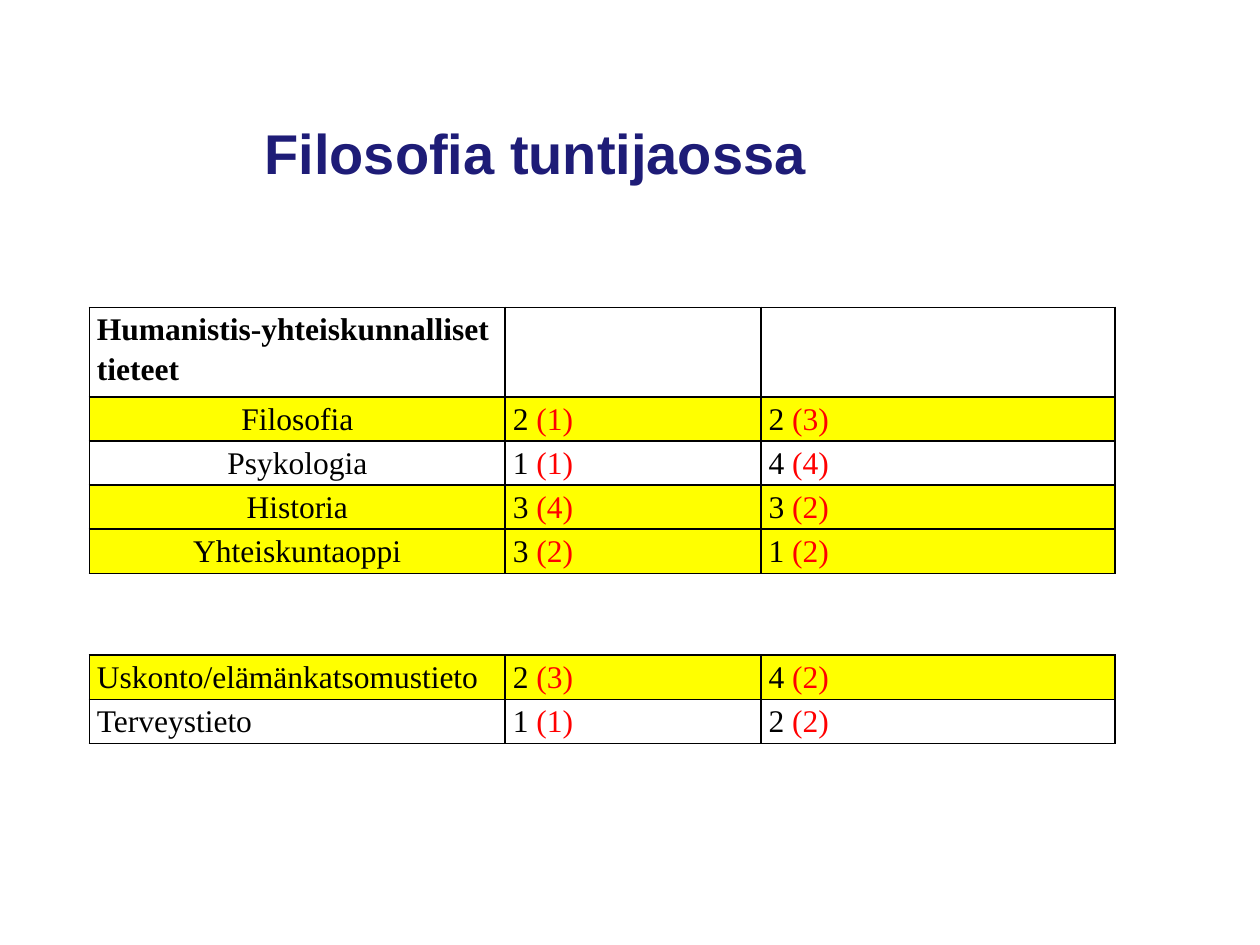
from lxml.etree import SubElement
from pptx import Presentation
from pptx.dml.color import RGBColor
from pptx.enum.text import MSO_ANCHOR, PP_ALIGN
from pptx.oxml.ns import qn
from pptx.util import Inches, Pt

BLACK, RED, YELLOW, WHITE, NAVY = "000000", "FF0000", "FFFF00", "FFFFFF", "1E1C77"


def color(hex_string):
    return RGBColor.from_string(hex_string)


def add_text(paragraph, text, *, font="Times New Roman", size=18, fill=BLACK, bold=False):
    run = paragraph.add_run()
    run.text = text
    run.font.name = font
    run.font.size = Pt(size)
    run.font.bold = bold
    run.font.color.rgb = color(fill)


class SlideBuilder:
    left = 0.71
    column_widths = (3.3, 2.03, 2.81)
    row_height = 0.35
    cell_margin = 0.06

    def __init__(self, presentation):
        self.slide = presentation.slides.add_slide(presentation.slide_layouts[5])

    def title(self, text):
        shape = self.slide.shapes.title
        shape.left, shape.top = Inches(2), Inches(0.17)
        shape.width, shape.height = Inches(7.67), Inches(1.22)
        frame = shape.text_frame
        frame.word_wrap = True
        frame.vertical_anchor = MSO_ANCHOR.TOP
        frame.margin_top, frame.margin_bottom = Inches(0.89), 0
        paragraph = frame.paragraphs[0]
        paragraph.alignment = PP_ALIGN.LEFT
        paragraph.line_spacing = Pt(30)
        add_text(paragraph, text, font="Arial", size=32, fill=NAVY, bold=True)

    def borders(self, cell):
        properties = cell._tc.get_or_add_tcPr()
        for position, side in enumerate(("lnL", "lnR", "lnT", "lnB")):
            line = properties.makeelement(qn(f"a:{side}"), {"w": str(Pt(1))})
            properties.insert(position, line)
            fill = SubElement(line, qn("a:solidFill"))
            SubElement(fill, qn("a:srgbClr"), val=BLACK)

    def cell(self, cell, parts, fill, bold=False, alignment=PP_ALIGN.LEFT):
        cell.margin_left = cell.margin_right = Inches(self.cell_margin)
        cell.margin_top = cell.margin_bottom = 0
        cell.fill.solid()
        cell.fill.fore_color.rgb = color(fill)
        self.borders(cell)
        paragraph = cell.text_frame.paragraphs[0]
        paragraph.alignment = alignment
        paragraph.line_spacing = 1.15
        paragraph.space_after = Pt(10)
        for text, text_color in parts:
            add_text(paragraph, text, fill=text_color, bold=bold)

    def table(self, top, subjects, heading=None, alignment=PP_ALIGN.LEFT):
        heights = [0.71] * bool(heading) + [self.row_height] * len(subjects)
        table = self.slide.shapes.add_table(
            len(heights), len(self.column_widths), Inches(self.left), Inches(top),
            Inches(sum(self.column_widths)), Inches(sum(heights))).table
        table.first_row = table.horz_banding = False
        for column, width in zip(table.columns, self.column_widths):
            column.width = Inches(width)
        for row, height in zip(table.rows, heights):
            row.height = Inches(height)

        rows = list(table.rows)
        if heading:
            for cell, text in zip(rows.pop(0).cells, (heading, "", "")):
                self.cell(cell, [(text, BLACK)] if text else [], WHITE, bold=True)
        # Each count is a pair: the current value, then the other in red
        for row, (name, fill, *counts) in zip(rows, subjects):
            name_cell, *count_cells = row.cells
            self.cell(name_cell, [(name, BLACK)], fill, alignment=alignment)
            for cell, (count, bracketed) in zip(count_cells, counts):
                self.cell(cell, [(f"{count} ", BLACK), (f"({bracketed})", RED)], fill)


def main():
    presentation = Presentation()
    presentation.slide_width, presentation.slide_height = Inches(10), Inches(7.5)
    builder = SlideBuilder(presentation)

    # Title
    builder.title("Filosofia tuntijaossa")

    # Humanities and social sciences
    builder.table(2.44, [
        ("Filosofia", YELLOW, (2, 1), (2, 3)),
        ("Psykologia", WHITE, (1, 1), (4, 4)),
        ("Historia", YELLOW, (3, 4), (3, 2)),
        ("Yhteiskuntaoppi", YELLOW, (3, 2), (1, 2)),
    ], heading="Humanistis-yhteiskunnalliset tieteet", alignment=PP_ALIGN.CENTER)

    # Other subjects
    builder.table(5.2, [
        ("Uskonto/elämänkatsomustieto", YELLOW, (2, 3), (4, 2)),
        ("Terveystieto", WHITE, (1, 1), (2, 2)),
    ])
    presentation.save("out.pptx")


if __name__ == "__main__":
    main()
